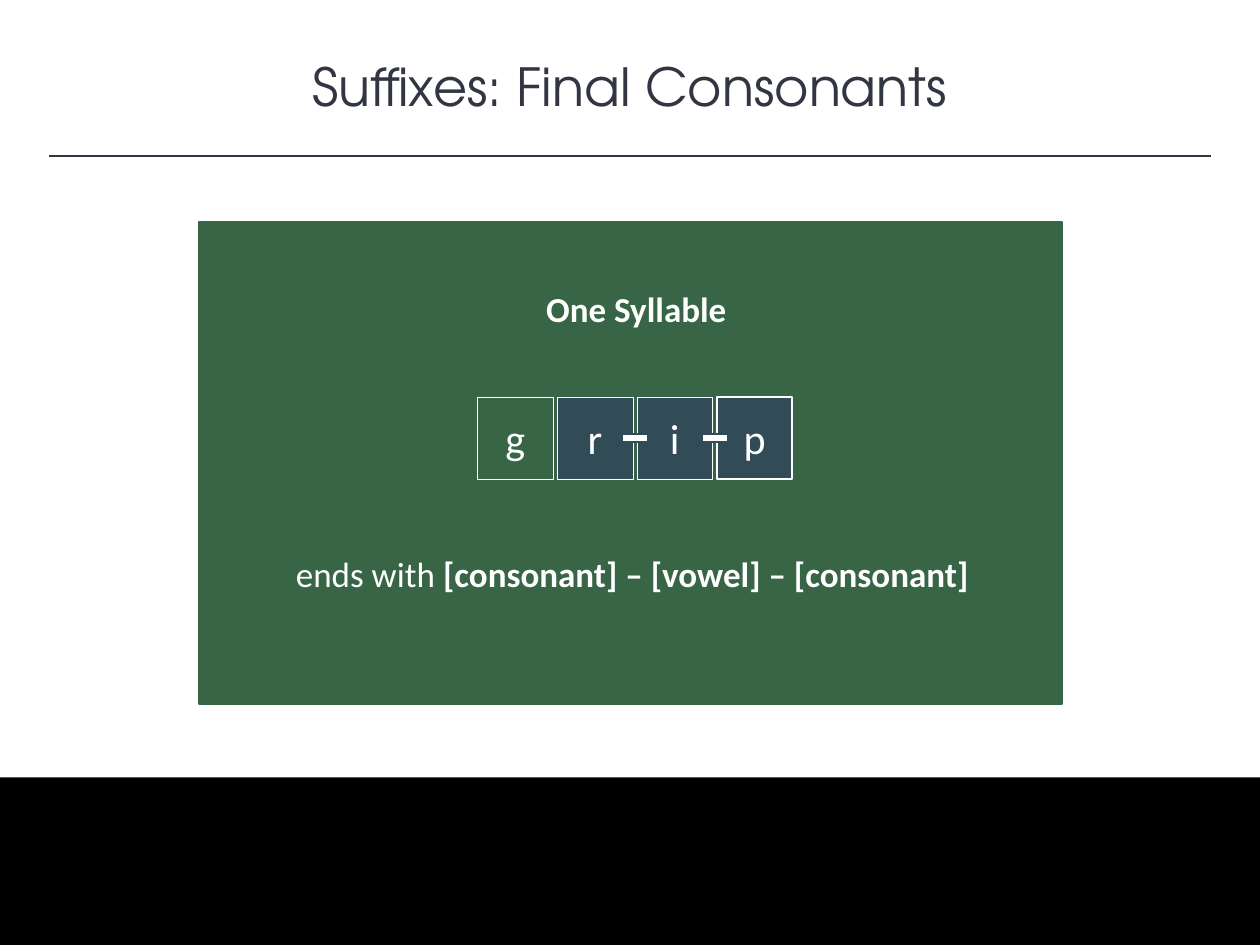
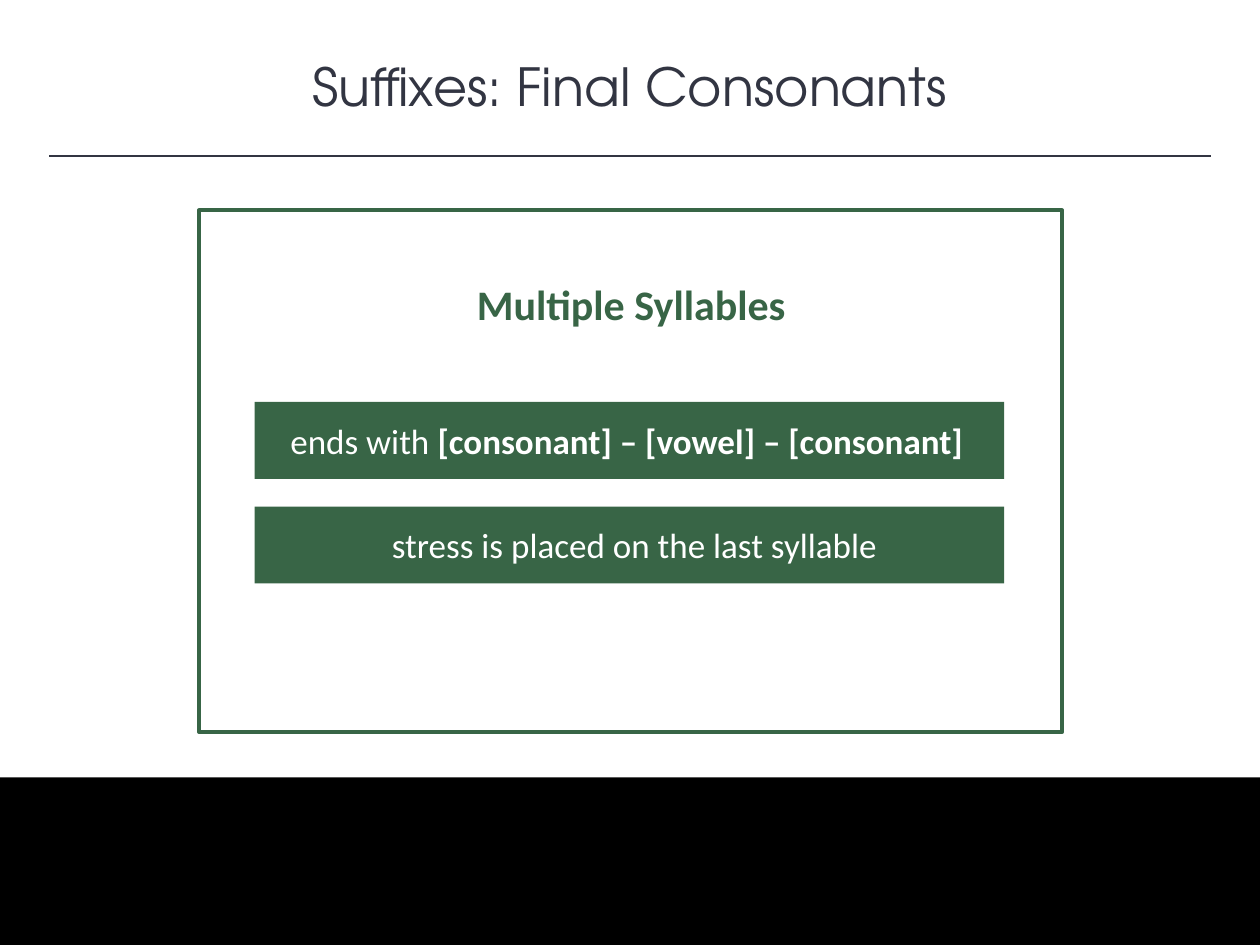
from pptx import Presentation
from pptx.dml.color import RGBColor
from pptx.enum.shapes import MSO_CONNECTOR, MSO_SHAPE as SHAPE
from pptx.enum.text import MSO_ANCHOR as ANCHOR, PP_ALIGN as ALIGN
from pptx.oxml.ns import qn
from pptx.util import Inches, Pt
from lxml import etree

COLORS = {
    "ink": "323542",
    "green": "386546",
    "slate": "314C57",
    "white": "FFFFFF",
    "black": "000000",
}
TITLE_FONT, BODY_FONT = "TeX Gyre Adventor", "Calibri"
WIDTH, HEIGHT = 10, 7.5
PATTERN = [("ends with ", False), ("[consonant] – [vowel] – [consonant] ", True)]


def rgb(name):
    """Return the palette colour called name."""
    return RGBColor.from_string(COLORS[name])


def write(shape, runs, size, color="white", font=BODY_FONT, shift=0):
    """Write (text, bold) runs centred in a shape, moved right by shift."""
    tf = shape.text_frame
    tf.word_wrap = True
    tf.vertical_anchor = ANCHOR.MIDDLE
    tf.margin_left = Inches(0.1 + 2 * shift)
    tf.margin_right = Inches(0.1)
    p = tf.paragraphs[0]
    p.alignment = ALIGN.CENTER
    for text, bold in runs:
        r = p.add_run()
        r.text = text
        r.font.name = font
        r.font.size = Pt(size)
        r.font.bold = bold
        r.font.color.rgb = rgb(color)


def add_block(s, box, fill, line=None, weight=1, kind=SHAPE.RECTANGLE):
    """Add a flat shape with an optional outline."""
    sp = s.shapes.add_shape(kind, *map(Inches, box))
    sp.shadow.inherit = False
    sp.fill.solid()
    sp.fill.fore_color.rgb = rgb(fill)
    if line:
        sp.line.color.rgb = rgb(line)
        sp.line.width = Pt(weight)
    else:
        sp.line.fill.background()
    return sp


def add_frame(prs, title):
    """Add a slide with the shared title, rule and bottom band."""
    s = prs.slides.add_slide(prs.slide_layouts[6])
    margin, rule_y, band = 0.39, 1.24, 1.33
    rule = s.shapes.add_connector(
        MSO_CONNECTOR.STRAIGHT, Inches(margin), Inches(rule_y),
        Inches(WIDTH - margin), Inches(rule_y))
    rule.line.color.rgb = rgb("ink")
    rule.line.width = Pt(1)
    etree.SubElement(rule.element.spPr, qn("a:effectLst"))
    add_block(s, (0, HEIGHT - band, WIDTH, band), "black")
    heading = s.shapes.add_textbox(0, Inches(0.37), Inches(WIDTH), Inches(0.61))
    write(heading, [(title, False)], 30, "ink", TITLE_FONT)
    return s


def add_word_tiles(s, left, top, word, pattern_start):
    """Spell a word in tiles and join the letters of its ending with dashes."""
    width, height, pitch, dash = 0.6, 0.65, 0.633, 0.28
    last = len(word) - 1
    for i, letter in enumerate(word):
        fill = "slate" if i >= pattern_start else "green"
        tile = add_block(s, (left + i * pitch, top, width, height), fill,
                         "white", 1 if i == last else 0.25)
        write(tile, [(letter, False)], 24)
    for i in range(pattern_start + 1, len(word)):
        x = left + i * pitch - (pitch - width) / 2 - dash / 2
        y = top + (height - dash) / 2
        add_block(s, (x, y, dash, dash), "white", "slate",
                  kind=SHAPE.MATH_MINUS)


def add_one_syllable(s, box):
    """Fill the box with the rule for words of one syllable."""
    left, top, _, _ = box
    add_block(s, box, "green", "green")
    add_word_tiles(s, left + 2.21, top + 1.39, "grip", 1)
    for dy, runs in ((0.47, [("One Syllable", True)]), (2.57, PATTERN)):
        label = add_block(s, (left + 0.46, top + dy, 6.02, 0.44), "green")
        write(label, runs, 20)


def add_multiple_syllables(s, box):
    """Fill the box with the rules for words of several syllables."""
    left, top, _, _ = box
    add_block(s, box, "white", "green", 2.25)
    label = add_block(s, (left + 0.42, top + 0.49, 6.02, 0.5), "white")
    write(label, [("Multiple Syllables", True)], 24, "green")
    rules = [(PATTERN, 0.01),
             ([("stress is placed on the last syllable", False)], 0.04)]
    for i, (runs, shift) in enumerate(rules):
        bar = add_block(s, (left + 0.44, top + 1.52 + i * 0.83, 5.95, 0.61),
                        "green")
        write(bar, runs, 20, shift=shift)


def main():
    """Build both slides and save the deck."""
    prs = Presentation()
    prs.slide_width, prs.slide_height = Inches(WIDTH), Inches(HEIGHT)
    title = "Suffixes: Final Consonants"
    add_one_syllable(add_frame(prs, title), (1.58, 1.76, 6.85, 3.83))
    add_multiple_syllables(add_frame(prs, title), (1.58, 1.67, 6.85, 4.14))
    prs.save("out.pptx")


if __name__ == "__main__":
    main()
